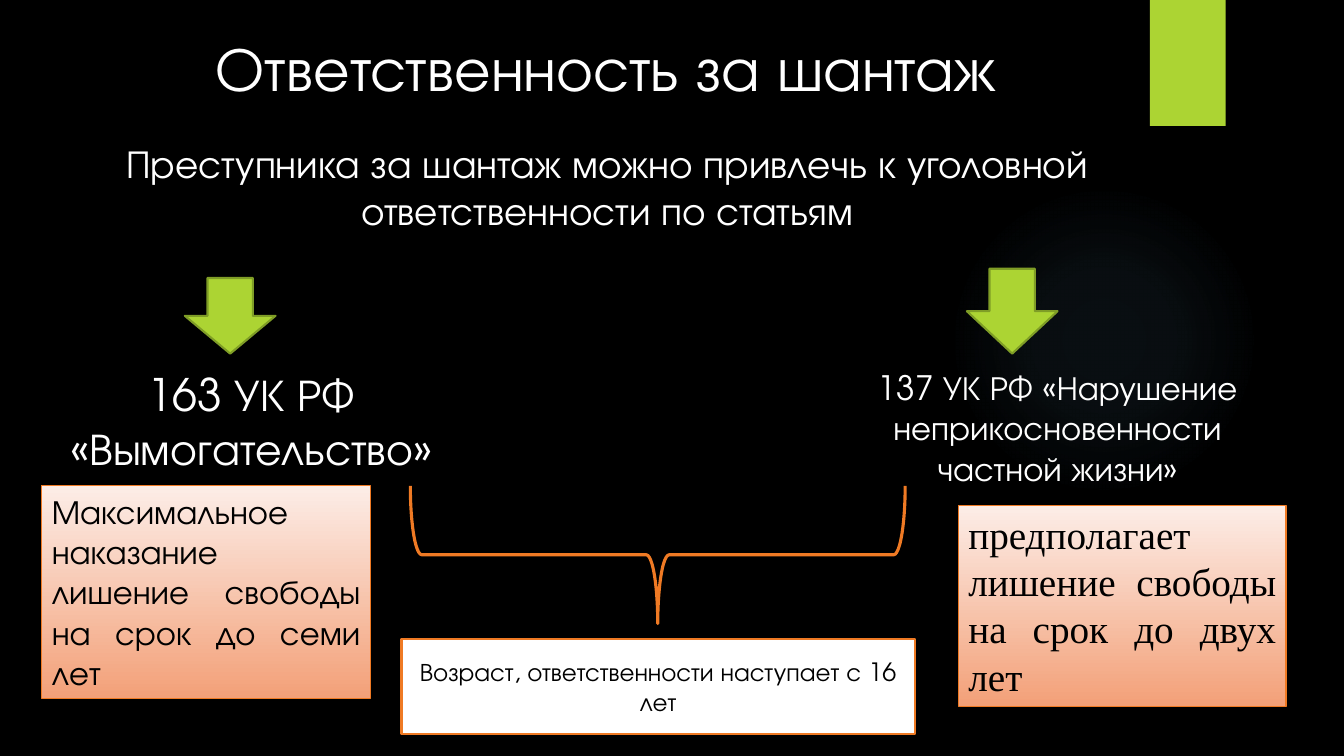
from dataclasses import dataclass

from lxml.etree import SubElement
from pptx import Presentation
from pptx.dml.color import RGBColor
from pptx.enum.shapes import MSO_SHAPE
from pptx.enum.text import MSO_ANCHOR, PP_ALIGN
from pptx.oxml.ns import qn
from pptx.util import Inches, Pt


@dataclass(frozen=True)
class Theme:
    """Colours, fonts and type sizes of the slide."""
    back: str = "000000"
    light: str = "FFFFFF"
    dark: str = "000000"
    green: str = "ACD433"
    green_edge: str = "7F9D26"
    orange: str = "EF7A24"
    glow: tuple = ((0, "7AC4F0", 7), (36, "7AC4F0", 6), (69, "7AC4F0", 0))
    peach: tuple = ((0, "FCEDE7", 100), (100, "F3A078", 100))
    sans: str = "TeX Gyre Adventor"
    serif: str = "Times New Roman"
    title: int = 44
    lead: int = 28
    article: int = 32
    body: int = 24
    note: int = 18


class Deck:
    """Draws elements on a grid of 160 columns by 90 rows."""

    def __init__(self, prs, theme):
        self.theme = theme
        self.col, self.row = prs.slide_width / 160, prs.slide_height / 90
        self.slide = prs.slides.add_slide(prs.slide_layouts[6])
        fill = self.slide.background.fill
        fill.solid()
        fill.fore_color.rgb = RGBColor.from_string(theme.back)

    def place(self, x, y, w, h):
        """Turn grid units into lengths."""
        return [round(v * u) for v, u in zip((x, y, w, h), (self.col, self.row) * 2)]

    def text(self, sp, words, size, color, font=None, align=PP_ALIGN.CENTER,
             anchor=MSO_ANCHOR.TOP):
        """Write one paragraph into a shape."""
        tf = sp.text_frame
        tf.word_wrap, tf.vertical_anchor = True, anchor
        p = tf.paragraphs[0]
        p.alignment = align
        r = p.add_run()
        r.text = words
        r.font.color.rgb = RGBColor.from_string(color)
        for name, value in {"size": Pt(size), "name": font or self.theme.sans}.items():
            setattr(r.font, name, value)

    def label(self, box, words, size):
        """Add a centred text box."""
        sp = self.slide.shapes.add_textbox(*self.place(*box))
        self.text(sp, words, size, self.theme.light)

    def gradient(self, sp, stops, radial=False):
        """Fill a shape with a linear or radial gradient."""
        sp.fill.gradient()
        grad = sp.element.spPr.find(qn("a:gradFill"))
        for child in list(grad):
            grad.remove(child)
        gs_list = SubElement(grad, qn("a:gsLst"))
        for pos, color, alpha in stops:
            gs = SubElement(gs_list, qn("a:gs"), pos=str(pos * 1000))
            clr = SubElement(gs, qn("a:srgbClr"), val=color)
            SubElement(clr, qn("a:alpha"), val=str(alpha * 1000))
        if radial:
            way = SubElement(grad, qn("a:path"), path="circle")
            SubElement(way, qn("a:fillToRect"), dict.fromkeys("ltrb", "50000"))
        else:
            SubElement(grad, qn("a:lin"), ang="5400000", scaled="0")

    def shape(self, kind, box, fill=None, line=None, width=1.5, shadow=False):
        """Add a preset shape with its fill, outline and shadow."""
        sp = self.slide.shapes.add_shape(kind, *self.place(*box))
        sp.shadow.inherit = False
        if fill is None:
            sp.fill.background()
        elif isinstance(fill, tuple):
            self.gradient(sp, fill, radial=kind == MSO_SHAPE.OVAL)
        else:
            sp.fill.solid()
            sp.fill.fore_color.rgb = RGBColor.from_string(fill)
        if line:
            sp.line.color.rgb = RGBColor.from_string(line)
            sp.line.width = Pt(width)
        else:
            sp.line.fill.background()
        if shadow:
            effects = sp.element.spPr.find(qn("a:effectLst"))
            shd = SubElement(effects, qn("a:outerShdw"), blurRad=str(Pt(3)),
                             dist=str(Pt(2)), dir="5400000", rotWithShape="0")
            clr = SubElement(shd, qn("a:srgbClr"), val=self.theme.dark)
            SubElement(clr, qn("a:alpha"), val="45000")
        return sp

    def arrow(self, box):
        """Add a green arrow pointing down."""
        self.shape(MSO_SHAPE.DOWN_ARROW, box, self.theme.green, self.theme.green_edge)

    def brace(self, box):
        """Add a brace that opens upwards."""
        sp = self.shape(MSO_SHAPE.RIGHT_BRACE, box, None, self.theme.orange, 2.25, True)
        sp.rotation = 90

    def penalty(self, box, words, size, font):
        """Add a peach panel with justified text."""
        t = self.theme
        sp = self.shape(MSO_SHAPE.RECTANGLE, box, t.peach, t.orange, 0.75)
        self.text(sp, words, size, t.dark, font, PP_ALIGN.JUSTIFY)

    def note(self, box, words):
        """Add a white framed note."""
        t = self.theme
        sp = self.shape(MSO_SHAPE.RECTANGLE, box, t.light, t.orange)
        self.text(sp, words, t.note, t.dark, anchor=MSO_ANCHOR.MIDDLE)


def main():
    """Build the slide and save it."""
    prs = Presentation()
    prs.slide_width, prs.slide_height = Inches(13.33), Inches(7.5)
    t = Theme()
    s = Deck(prs, t)
    s.shape(MSO_SHAPE.OVAL, (112.9, 22, 37, 37), t.glow)
    s.shape(MSO_SHAPE.RECTANGLE, (136.9, 0, 9, 15), t.green, shadow=True)
    s.label((5, 3, 134.4, 10.1), "Ответственность за шантаж", t.title)
    s.label((8.3, 16, 128, 16.2),
            "Преступника за шантаж можно привлечь к уголовной ответственности по статьям",
            t.lead)
    s.arrow((22, 33.1, 10.8, 9))
    s.label((5, 43.1, 49.9, 14.2), "163 УК РФ «Вымогательство»", t.article)
    s.arrow((115.1, 32, 10.8, 10.1))
    s.label((98.6, 43.1, 54.6, 15.7),
            "137 УК РФ «Нарушение неприкосновенности частной жизни»", t.body)
    s.brace((70.1, 36.6, 16.4, 58.9))
    s.note((47.8, 76.1, 61.1, 11.3), "Возраст, ответственности наступает с 16 лет")
    s.penalty((114.1, 60.2, 39, 23.9),
              "предполагает лишение свободы на срок до двух лет", t.lead, t.serif)
    s.penalty((5, 57.8, 39.1, 25.4),
              "Максимальное наказание лишение свободы на срок до семи лет", t.body, t.sans)
    prs.save("out.pptx")


if __name__ == "__main__":
    main()
